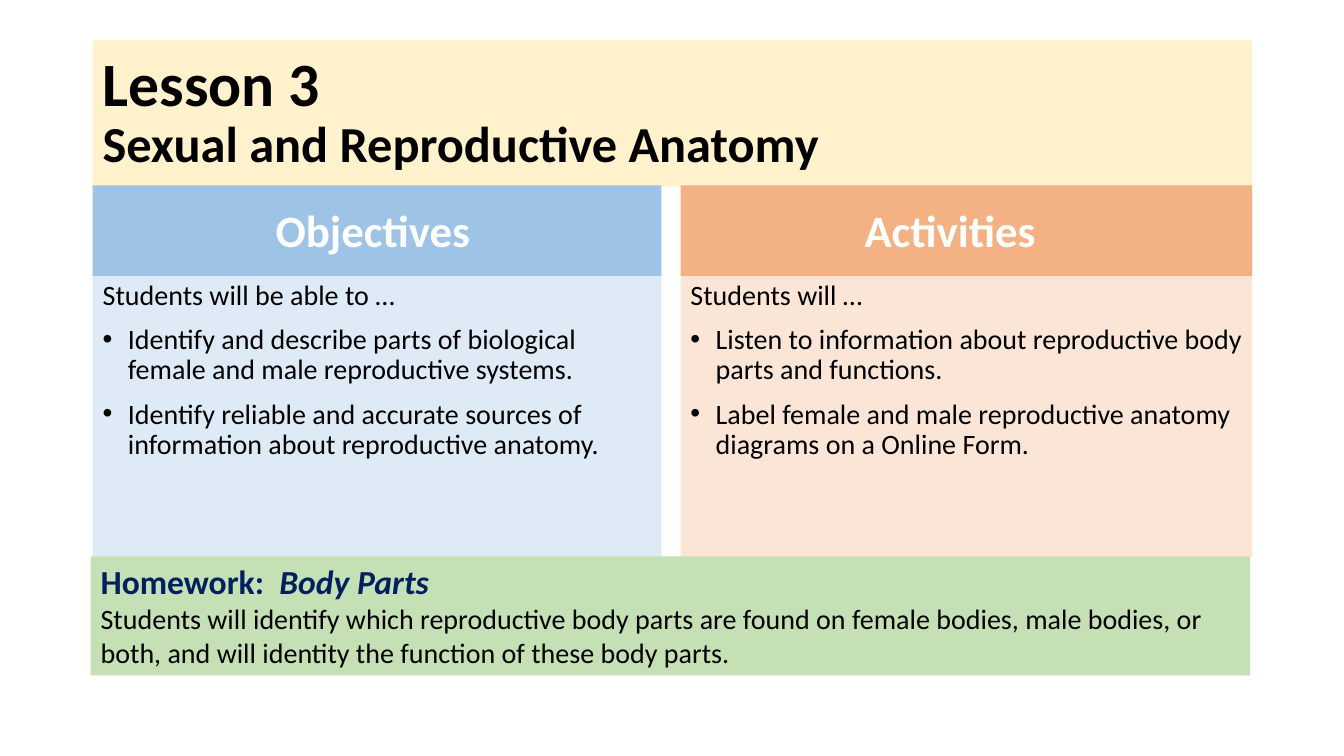
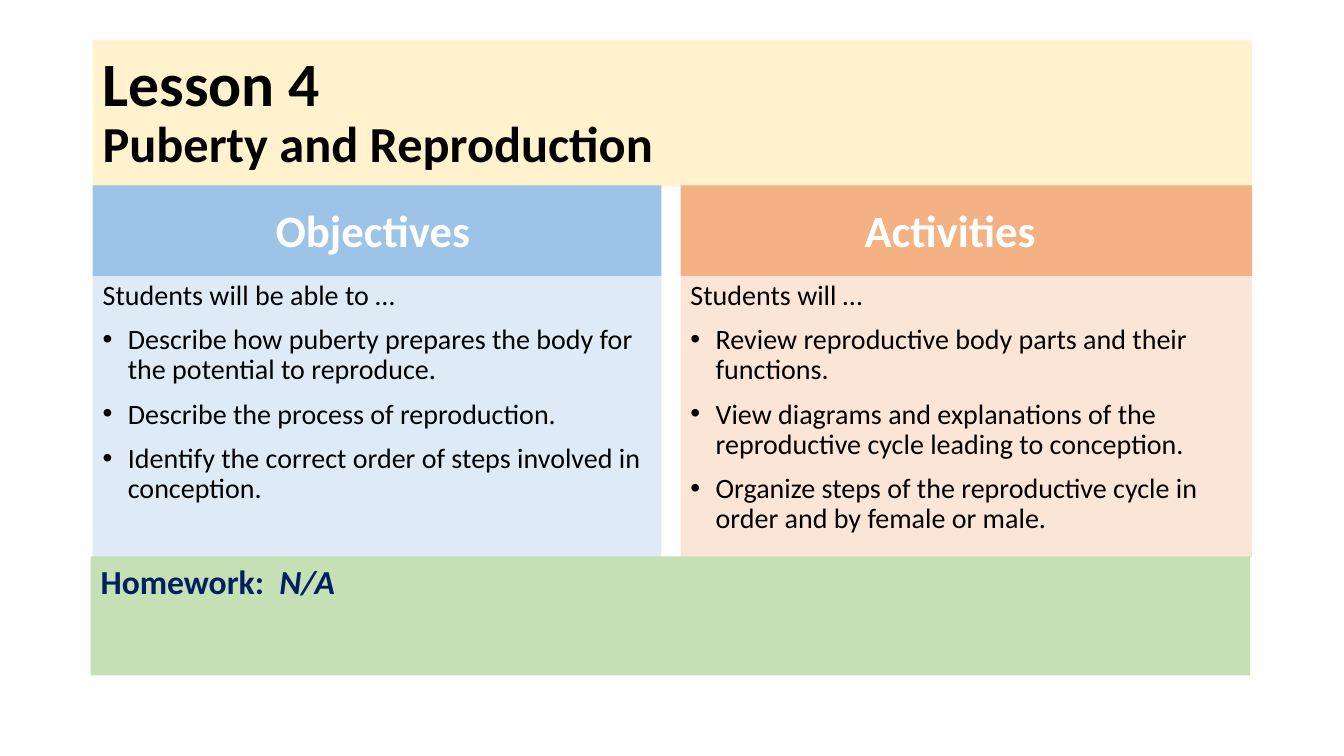
import dataclasses

import lxml.etree
import pptx
import pptx.dml.color
import pptx.enum.shapes
import pptx.enum.text
import pptx.oxml.ns
import pptx.util

EMU_PER_PX = 9144  # 100 px to the inch
ANCHOR = pptx.enum.text.MSO_ANCHOR
ALIGN = pptx.enum.text.PP_ALIGN


@dataclasses.dataclass(frozen=True)
class Theme:
    font: str = "Calibri"
    text: str = "000000"
    header_text: str = "FFFFFF"
    homework_text: str = "002060"
    title_fill: str = "FFF2CC"
    homework_fill: str = "C5E0B4"
    objectives_header: str = "9DC3E6"
    objectives_fill: str = "DEEBF7"
    activities_header: str = "F4B183"
    activities_fill: str = "FBE5D6"
    lesson_size: int = 44
    topic_size: int = 36
    header_size: int = 32
    homework_size: int = 24
    body_size: int = 20


theme = Theme()

# Layout shared by the lessons
SLIDE_WIDTH, SLIDE_HEIGHT = 1333, 750
LEFT, WIDTH = 92, 1150
TITLE_TOP, TITLE_HEIGHT = 40, 145
HEADER_TOP, HEADER_HEIGHT = 184, 90
BODY_TOP, BODY_HEIGHT = HEADER_TOP + HEADER_HEIGHT, 279
HOMEWORK_LEFT, HOMEWORK_TOP, HOMEWORK_HEIGHT = 90, 552, 118
HEADER_BOTTOM_INSET = 20
BULLET_INDENT = 25

# Heading, opening line, left, width, right inset of the heading, fills
COLUMNS = [
    ("Objectives", "Students will be able to …", LEFT, 564, 18,
     theme.objectives_header, theme.objectives_fill),
    ("Activities", "Students will …", 675, 567, 42,
     theme.activities_header, theme.activities_fill),
]

LESSONS = [
    {
        "title": "Lesson 3",
        "topic": "Sexual and Reproductive Anatomy",
        "Objectives": [
            "Identify and describe parts of biological female and male reproductive systems.",
            "Identify reliable and accurate sources of information about reproductive anatomy.",
        ],
        "Activities": [
            "Listen to information about reproductive body parts and functions.",
            "Label female and male reproductive anatomy diagrams on a Online Form.",
        ],
        "homework": "Body Parts",
        "task": "Students will identify which reproductive body parts are found on female bodies, "
                "male bodies, or both, and will identity the function of these body parts.",
    },
    {
        "title": "Lesson 4",
        "topic": "Puberty and Reproduction",
        "Objectives": [
            "Describe how puberty prepares the body for the potential to reproduce.",
            "Describe the process of reproduction.",
            "Identify the correct order of steps involved in conception.",
        ],
        "Activities": [
            "Review reproductive body parts and their functions.",
            "View diagrams and explanations of the reproductive cycle leading to conception.",
            "Organize steps of the reproductive cycle in order and by female or male.",
        ],
        "homework": "N/A",
        "task": None,
    },
]


def add_panel(page, left, top, width, height, fill, anchor=ANCHOR.TOP):
    """Add a filled rectangle and return its text frame."""
    box = page.shapes.add_shape(
        pptx.enum.shapes.MSO_SHAPE.RECTANGLE,
        *(length * EMU_PER_PX for length in (left, top, width, height)))
    box.shadow.inherit = False
    box.line.fill.background()
    box.fill.solid()
    box.fill.fore_color.rgb = pptx.dml.color.RGBColor.from_string(fill)
    frame = box.text_frame
    frame.word_wrap = True
    frame.vertical_anchor = anchor
    frame.paragraphs[0].alignment = ALIGN.LEFT
    return frame


def add_span(para, text, size, color=theme.text, bold=False, italic=False):
    """Add one run of text to a paragraph."""
    span = para.add_run()
    span.text = text
    span.font.name = theme.font
    span.font.size = pptx.util.Pt(size)
    span.font.bold = bold
    span.font.italic = italic
    span.font.color.rgb = pptx.dml.color.RGBColor.from_string(color)


deck = pptx.Presentation()
deck.slide_width = SLIDE_WIDTH * EMU_PER_PX
deck.slide_height = SLIDE_HEIGHT * EMU_PER_PX

for lesson in LESSONS:
    page = deck.slides.add_slide(deck.slide_layouts[6])

    # Title band
    frame = add_panel(page, LEFT, TITLE_TOP, WIDTH, TITLE_HEIGHT,
                      theme.title_fill, ANCHOR.MIDDLE)
    para = frame.paragraphs[0]
    para.line_spacing = 0.9
    add_span(para, lesson["title"], theme.lesson_size, bold=True)
    para.add_line_break()
    add_span(para, lesson["topic"], theme.topic_size, bold=True)

    for heading, opening, left, width, right_inset, header_fill, body_fill in COLUMNS:
        # Column heading
        frame = add_panel(page, left, HEADER_TOP, width, HEADER_HEIGHT,
                          header_fill, ANCHOR.BOTTOM)
        frame.margin_right = right_inset * EMU_PER_PX
        frame.margin_bottom = HEADER_BOTTOM_INSET * EMU_PER_PX
        para = frame.paragraphs[0]
        para.alignment = ALIGN.CENTER
        add_span(para, heading, theme.header_size, theme.header_text, bold=True)

        # Opening line and bullets
        frame = add_panel(page, left, BODY_TOP, width, BODY_HEIGHT, body_fill)
        for index, text in enumerate([opening] + lesson[heading]):
            para = frame.add_paragraph() if index else frame.paragraphs[0]
            para.alignment = ALIGN.LEFT
            para.line_spacing = 0.9
            para.space_before = pptx.util.Pt(10)
            if index:
                properties = para._p.get_or_add_pPr()
                properties.set("marL", str(BULLET_INDENT * EMU_PER_PX))
                properties.set("indent", str(-BULLET_INDENT * EMU_PER_PX))
                lxml.etree.SubElement(
                    properties, pptx.oxml.ns.qn("a:buFont"), typeface="Arial")
                lxml.etree.SubElement(
                    properties, pptx.oxml.ns.qn("a:buChar"), char="•")
            add_span(para, text, theme.body_size)

    # Homework band
    frame = add_panel(page, HOMEWORK_LEFT, HOMEWORK_TOP, WIDTH, HOMEWORK_HEIGHT,
                      theme.homework_fill)
    para = frame.paragraphs[0]
    add_span(para, "Homework:  ", theme.homework_size, theme.homework_text, bold=True)
    add_span(para, lesson["homework"], theme.homework_size, theme.homework_text,
             bold=True, italic=True)
    if lesson["task"]:
        para = frame.add_paragraph()
        para.alignment = ALIGN.LEFT
        add_span(para, lesson["task"], theme.body_size)

deck.save("out.pptx")
